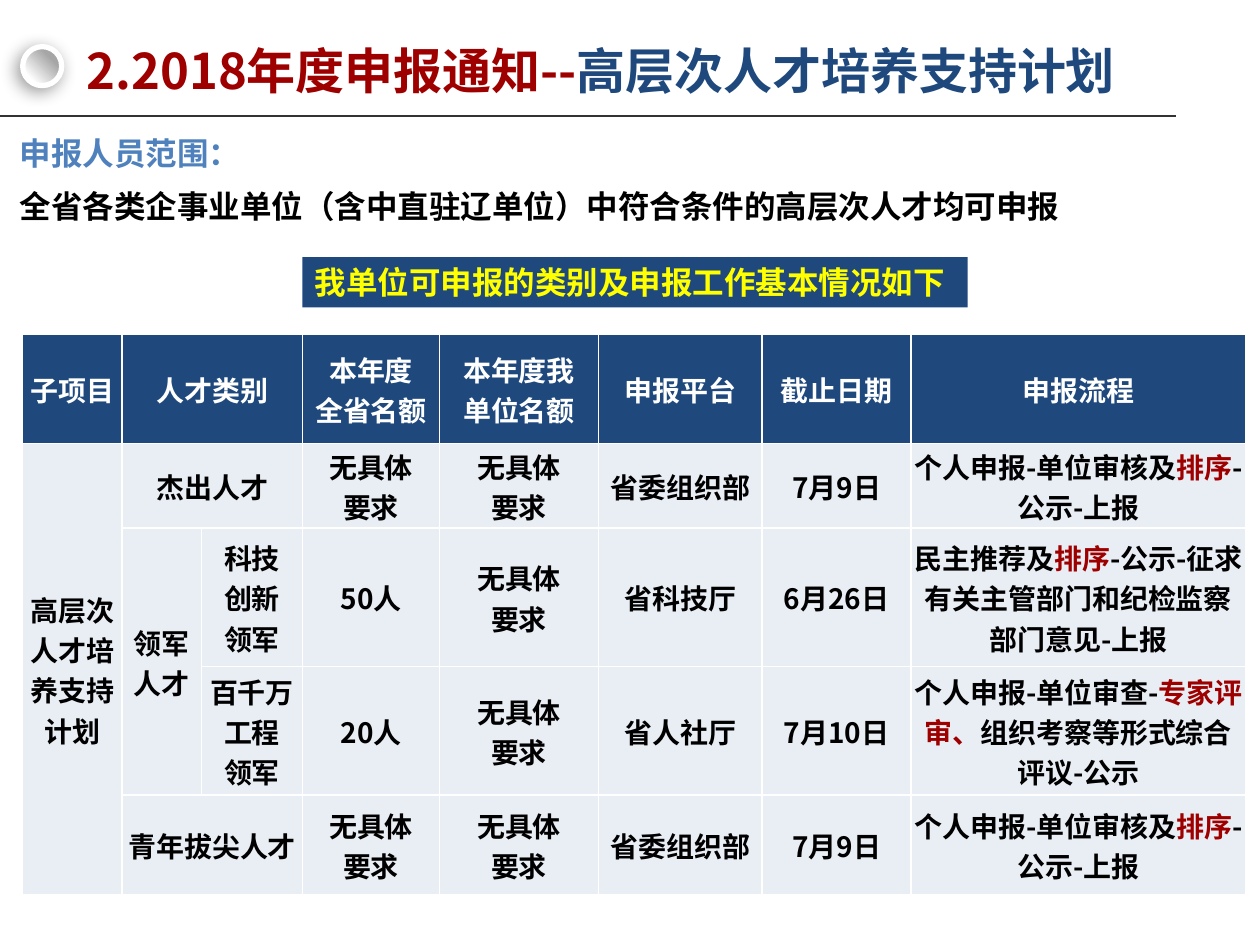
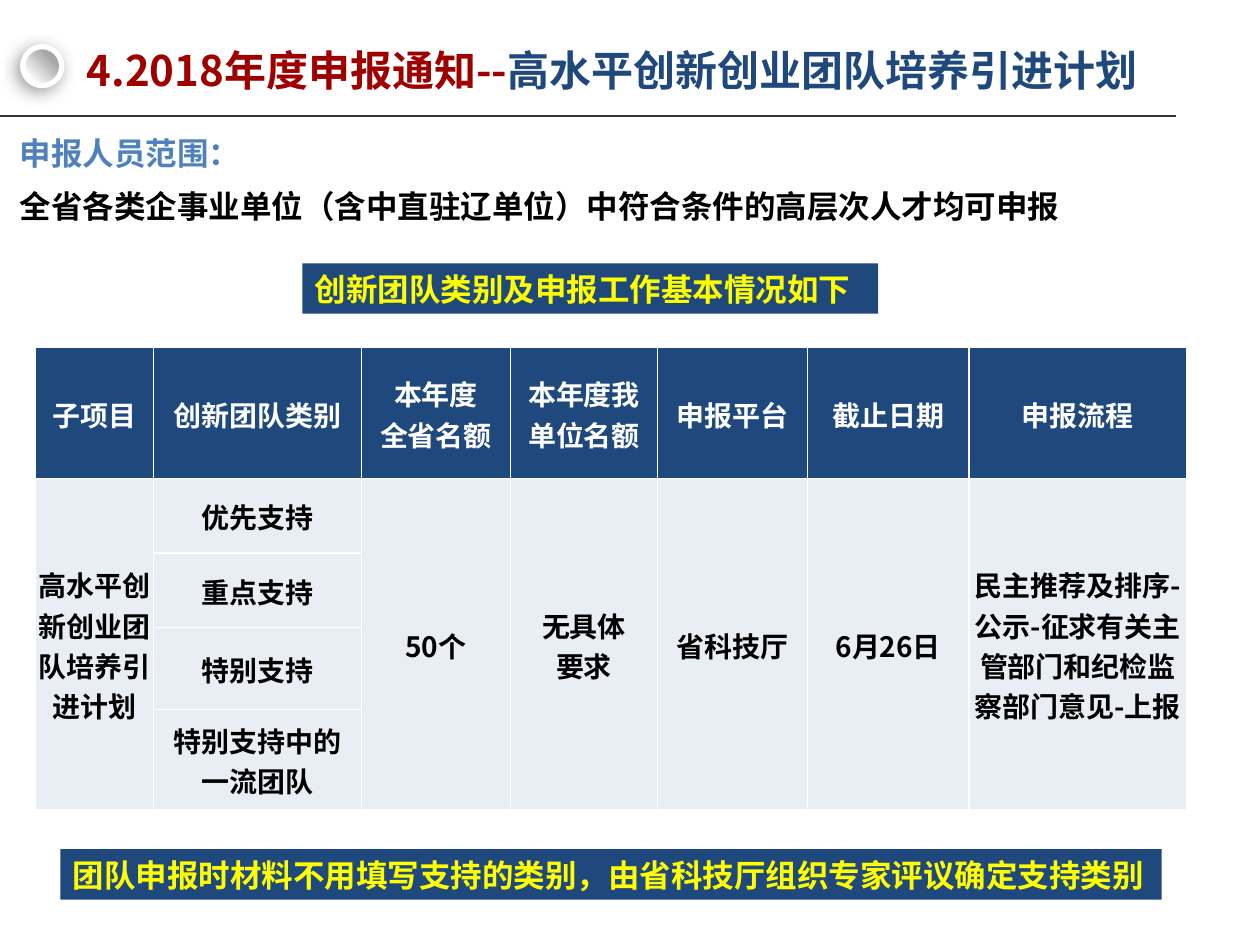
"""Builds two slides on the 2018 talent programme application notice."""
from pptx import Presentation
from pptx.dml.color import RGBColor
from pptx.enum.shapes import MSO_CONNECTOR, MSO_SHAPE
from pptx.enum.text import MSO_ANCHOR, PP_ALIGN
from pptx.oxml import parse_xml
from pptx.oxml.ns import nsdecls, qn
from pptx.util import Inches, Pt

FONT = "Noto Sans CJK SC"
NAVY = RGBColor(0x1F, 0x49, 0x7D)
RED = RGBColor(0x9E, 0x00, 0x00)
BLUE = RGBColor(0x4F, 0x81, 0xBD)
YELLOW = RGBColor(0xFF, 0xFF, 0x00)
PALE = RGBColor(0xE9, 0xED, 0xF4)
WHITE = RGBColor(0xFF, 0xFF, 0xFF)
BLACK = RGBColor(0x00, 0x00, 0x00)
RULE = RGBColor(0x33, 0x33, 0x33)

SCOPE = [("申报人员范围：", BLUE),
         ("全省各类企事业单位（含中直驻辽单位）中符合条件的高层次人才均可申报", BLACK)]
QUOTAS = ["本年度\n全省名额", "本年度我\n单位名额", "申报平台", "截止日期", "申报流程"]
OPEN = "无具体\n要求"
RANKED = "个人申报-单位审核及*排序*-公示-上报"

# Text between asterisks is set in red; merges are (top, left, bottom, right).
SLIDES = [
    {
        "title": ("2.2018年度申报通知--", "高层次人才培养支持计划"),
        "title_size": 28, "title_width": 8.74,
        "banners": [("我单位可申报的类别及申报工作基本情况如下", 2.4, 2.04, 5.28)],
        "table_at": (0.18, 2.65),
        "columns": [0.79, 0.63, 0.8, 1.09, 1.26, 1.3, 1.18, 2.66],
        "heights": [0.87, 0.67, 1.1, 1.02, 0.79],
        "rows": [
            ["子项目", "人才类别", "", *QUOTAS],
            ["高层次人才培养支持计划", "杰出人才", "", OPEN, OPEN, "省委组织部", "7月9日", RANKED],
            ["", "领军人才", "科技\n创新\n领军", "50人", OPEN, "省科技厅", "6月26日",
             "民主推荐及*排序*-公示-征求有关主管部门和纪检监察部门意见-上报"],
            ["", "", "百千万工程\n领军", "20人", OPEN, "省人社厅", "7月10日",
             "个人申报-单位审查-*专家评审、*组织考察等形式综合评议-公示"],
            ["", "青年拔尖人才", "", OPEN, OPEN, "省委组织部", "7月9日", RANKED],
        ],
        "merges": [(0, 1, 0, 2), (1, 0, 4, 0), (1, 1, 1, 2), (2, 1, 3, 1), (4, 1, 4, 2)],
    },
    {
        "title": ("4.2018年度申报通知--", "高水平创新创业团队培养引进计划"),
        "title_size": 24, "title_width": 8.98,
        "banners": [
            ("创新团队类别及申报工作基本情况如下", 2.4, 2.09, 4.57),
            ("团队申报时材料不用填写支持的类别，由省科技厅组织专家评议确定支持类别", 0.48, 6.74, 8.74),
        ],
        "table_at": (0.28, 2.76),
        "columns": [0.94, 1.65, 1.18, 1.17, 1.19, 1.28, 1.73],
        "heights": [1.04, 0.59, 0.59, 0.65, 0.8],
        "rows": [
            ["子项目", "创新团队类别", *QUOTAS],
            ["高水平创新创业团队培养引进计划", "优先支持", "50个", OPEN, "省科技厅", "6月26日",
             "民主推荐及排序-公示-征求有关主管部门和纪检监察部门意见-上报"],
            ["", "重点支持"],
            ["", "特别支持"],
            ["", "特别支持中的\n一流团队"],
        ],
        "merges": [(1, column, 4, column) for column in (0, 2, 3, 4, 5, 6)],
    },
]


def add_run(paragraph, text, size, color):
    run = paragraph.add_run()
    run.text = text
    run.font.size = Pt(size)
    run.font.bold = True
    run.font.name = FONT
    run.font.color.rgb = color
    run.font._element.append(parse_xml(f'<a:ea {nsdecls("a")} typeface="{FONT}"/>'))


def add_text_box(slide, left, top, width, height):
    frame = slide.shapes.add_textbox(
        Inches(left), Inches(top), Inches(width), Inches(height)).text_frame
    frame.word_wrap = True
    return frame


def add_header(slide, content):
    rule = slide.shapes.add_connector(
        MSO_CONNECTOR.STRAIGHT, 0, Inches(0.92), Inches(9.33), Inches(0.92))
    rule.line.color.rgb = RULE
    rule.line.width = Pt(0.75)
    rule._element.spPr.append(parse_xml(f'<a:effectLst {nsdecls("a")}/>'))

    ring = slide.shapes.add_shape(
        MSO_SHAPE.OVAL, Inches(0.18), Inches(0.37), Inches(0.31), Inches(0.31))
    ring.line.color.rgb = WHITE
    ring.line.width = Pt(3)
    ring.shadow.inherit = False
    ring.fill.gradient()
    properties = ring._element.spPr
    properties.replace(properties.find(qn("a:gradFill")), parse_xml(
        f'<a:gradFill {nsdecls("a")}><a:gsLst>'
        '<a:gs pos="19000"><a:srgbClr val="FFFFFF"/></a:gs>'
        '<a:gs pos="72000"><a:srgbClr val="A6A6A6"/></a:gs></a:gsLst>'
        '<a:path path="circle"><a:fillToRect t="100000" r="100000"/></a:path></a:gradFill>'))
    properties.find(qn("a:effectLst")).append(parse_xml(
        f'<a:outerShdw {nsdecls("a")} blurRad="{Pt(10)}" dist="{Pt(3)}" dir="8100000">'
        '<a:srgbClr val="000000"><a:alpha val="40000"/></a:srgbClr></a:outerShdw>'))

    title = add_text_box(slide, 0.59, 0.21, content["title_width"], 0.69)
    title.vertical_anchor = MSO_ANCHOR.MIDDLE
    for text, color in zip(content["title"], (RED, NAVY)):
        add_run(title.paragraphs[0], text, content["title_size"], color)


def add_scope(slide):
    scope = add_text_box(slide, 0.06, 0.9, 9.29, 0.94)
    for index, (text, color) in enumerate(SCOPE):
        paragraph = scope.add_paragraph() if index else scope.paragraphs[0]
        paragraph.line_spacing = Pt(30)
        add_run(paragraph, text, 18, color)


def add_banner(slide, text, left, top, width):
    banner = slide.shapes.add_shape(
        MSO_SHAPE.RECTANGLE, Inches(left), Inches(top), Inches(width), Inches(0.4))
    banner.shadow.inherit = False
    banner.fill.solid()
    banner.fill.fore_color.rgb = NAVY
    banner.line.fill.background()
    banner.text_frame.word_wrap = True
    paragraph = banner.text_frame.paragraphs[0]
    paragraph.alignment = PP_ALIGN.LEFT
    add_run(paragraph, text, 18, YELLOW)


def style_cell(cell, fill):
    cell.margin_left = cell.margin_top = cell.margin_right = Inches(0.01)
    cell.margin_bottom = 0
    cell.vertical_anchor = MSO_ANCHOR.MIDDLE
    properties = cell._tc.get_or_add_tcPr()
    for side in ("lnL", "lnR", "lnT", "lnB"):
        properties.append(parse_xml(
            f'<a:{side} {nsdecls("a")} w="{Pt(1)}"><a:solidFill>'
            f'<a:srgbClr val="{WHITE}"/></a:solidFill></a:{side}>'))
    cell.fill.solid()
    cell.fill.fore_color.rgb = fill


def fill_cell(cell, text, color):
    for index, line in enumerate(text.split("\n")):
        paragraph = cell.text_frame.add_paragraph() if index else cell.text_frame.paragraphs[0]
        paragraph.alignment = PP_ALIGN.CENTER
        for part, piece in enumerate(line.split("*")):
            add_run(paragraph, piece, 16, RED if part % 2 else color)


def add_plan_table(slide, content):
    columns, heights = content["columns"], content["heights"]
    left, top = content["table_at"]
    table = slide.shapes.add_table(
        len(heights), len(columns), Inches(left), Inches(top),
        Inches(sum(columns)), Inches(sum(heights))).table
    table.horz_banding = False
    for column, width in zip(table.columns, columns):
        column.width = Inches(width)
    for index, (row, height) in enumerate(zip(table.rows, heights)):
        row.height = Inches(height)
        for cell in row.cells:
            style_cell(cell, PALE if index else NAVY)
        for cell, text in zip(row.cells, content["rows"][index]):
            if text:
                fill_cell(cell, text, BLACK if index else WHITE)
    for first_row, first_column, last_row, last_column in content["merges"]:
        table.cell(first_row, first_column).merge(table.cell(last_row, last_column))


def main():
    deck = Presentation()
    deck.slide_width, deck.slide_height = Inches(10), Inches(7.5)
    for content in SLIDES:
        slide = deck.slides.add_slide(deck.slide_layouts[6])
        add_header(slide, content)
        add_plan_table(slide, content)
        add_scope(slide)
        for banner in content["banners"]:
            add_banner(slide, *banner)
    deck.save("out.pptx")


if __name__ == "__main__":
    main()
